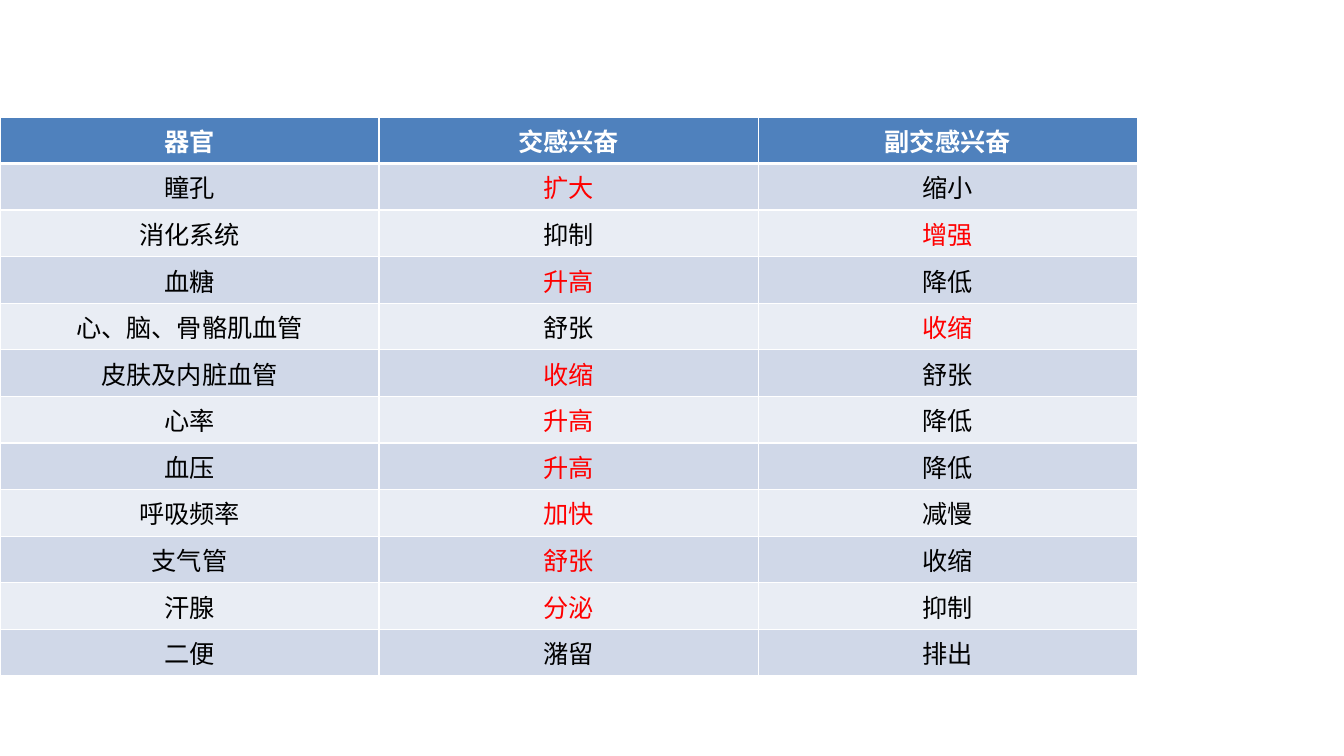
"""Build a slide with a table of autonomic nerve effects on target organs."""
from lxml import etree
from pptx import Presentation
from pptx import util as u
from pptx.dml.color import RGBColor
from pptx.enum import text
from pptx.oxml.ns import qn

HEADINGS = ("器官", "交感兴奋", "副交感兴奋")
EFFECTS = [
    ("瞳孔", "扩大", "缩小"),
    ("消化系统", "抑制", "增强"),
    ("血糖", "升高", "降低"),
    ("心、脑、骨骼肌血管", "舒张", "收缩"),
    ("皮肤及内脏血管", "收缩", "舒张"),
    ("心率", "升高", "降低"),
    ("血压", "升高", "降低"),
    ("呼吸频率", "加快", "减慢"),
    ("支气管", "舒张", "收缩"),
    ("汗腺", "分泌", "抑制"),
    ("二便", "潴留", "排出"),
]
RED_COLUMNS = (None, 1, 2, 1, 2, 1, 1, 1, 1, 1, 1, None)
HEADING_FILL = "4F81BD"
BAND_FILLS = ("E9EDF4", "D0D8E8")
WHITE, BLACK, RED = "FFFFFF", "000000", "FF0000"
LEFT, TOP, COLUMN_WIDTH, ROW_HEIGHT = 0, 1.16, 3.76, 0.46


def colour(hex_code):
    return RGBColor.from_string(hex_code)


def add_borders(cell, bottom_width):
    properties = cell._tc.get_or_add_tcPr()
    widths = {"a:lnL": 1, "a:lnR": 1, "a:lnT": 1, "a:lnB": bottom_width}
    for position, (side, width) in enumerate(widths.items()):
        border = etree.Element(qn(side), w=str(u.Pt(width)))
        line_fill = etree.SubElement(border, qn("a:solidFill"))
        etree.SubElement(line_fill, qn("a:srgbClr"), val=WHITE)
        properties.insert(position, border)


def fill_cell(cell, wording, ink, fill, heading):
    cell.fill.solid()
    cell.fill.fore_color.rgb = colour(fill)
    cell.vertical_anchor = text.MSO_ANCHOR.MIDDLE
    paragraph = cell.text_frame.paragraphs[0]
    paragraph.alignment = text.PP_ALIGN.CENTER
    run = paragraph.add_run()
    run.text = wording
    run.font.size = u.Pt(18)
    run.font.bold = heading
    run.font.color.rgb = colour(ink)
    run.font.name = "Calibri"
    etree.SubElement(run.font._element, qn("a:ea"), typeface="Noto Sans CJK SC")
    add_borders(cell, 3 if heading else 1)


def main():
    deck = Presentation()
    deck.slide_width, deck.slide_height = u.Inches(13.33), u.Inches(7.5)
    slide = deck.slides.add_slide(deck.slide_layouts[6])
    rows = [HEADINGS, *EFFECTS]
    effects_table = slide.shapes.add_table(
        len(rows), len(HEADINGS), u.Inches(LEFT), u.Inches(TOP),
        u.Inches(COLUMN_WIDTH * len(HEADINGS)), u.Inches(ROW_HEIGHT * len(rows)),
    ).table
    for row_number, (row, red_column) in enumerate(zip(rows, RED_COLUMNS)):
        heading = row_number == 0
        fill = HEADING_FILL if heading else BAND_FILLS[row_number % 2]
        for column_number, wording in enumerate(row):
            ink = WHITE if heading else RED if column_number == red_column else BLACK
            fill_cell(effects_table.cell(row_number, column_number),
                      wording, ink, fill, heading)
    deck.save("out.pptx")


if __name__ == "__main__":
    main()
